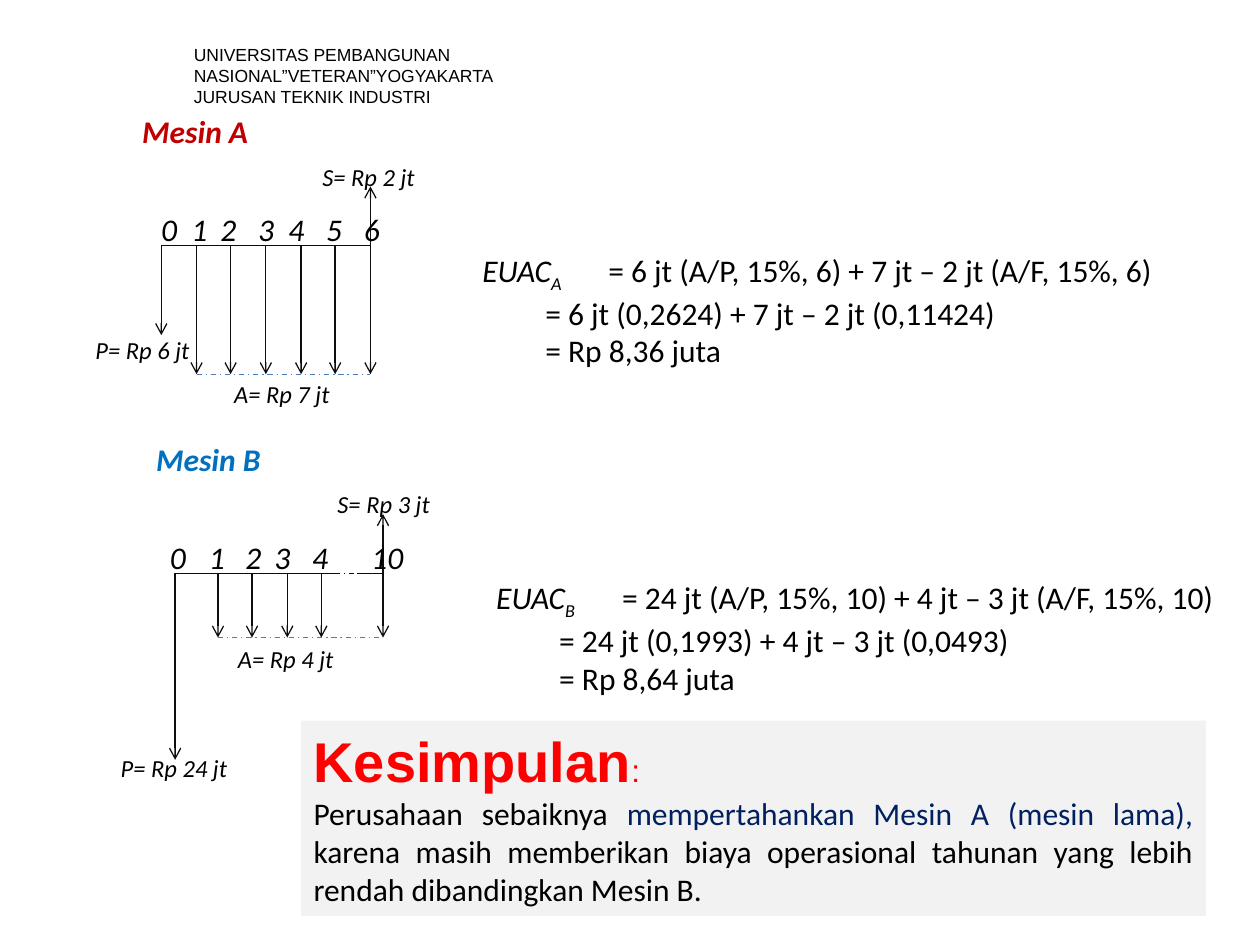
"""Build the slide that compares the annual costs of Mesin A and Mesin B."""
from lxml import etree
from pptx import Presentation
from pptx.dml.color import RGBColor
from pptx.enum import dml, shapes, text
from pptx.oxml.ns import qn
from pptx.util import Inches, Pt

BLACK = RGBColor(0x00, 0x00, 0x00)
INK = RGBColor(0x0D, 0x0D, 0x0D)
BLUE_LINE = RGBColor(0x4B, 0x7E, 0xBC)
DARK_RED = RGBColor(0xC0, 0x00, 0x00)
BLUE = RGBColor(0x00, 0x70, 0xC0)
RED = RGBColor(0xFF, 0x00, 0x00)
NAVY = RGBColor(0x00, 0x20, 0x60)
PALE = RGBColor(0xF2, 0xF2, 0xF2)

prs = Presentation()
prs.slide_width, prs.slide_height = Inches(10), Inches(7.5)
s = prs.slides.add_slide(prs.slide_layouts[6])


def add_line(x1, y1, x2, y2, color=INK, arrow=False, dashed=False):
    c = s.shapes.add_connector(shapes.MSO_CONNECTOR.STRAIGHT,
                               Inches(x1), Inches(y1), Inches(x2), Inches(y2))
    c.line.color.rgb = color
    c.line.width = Pt(0.75)
    if dashed:
        c.line.dash_style = dml.MSO_LINE.DASH_DOT
    if arrow:
        etree.SubElement(c.line._get_or_add_ln(), qn("a:tailEnd"), type="arrow")
    etree.SubElement(c._element.spPr, qn("a:effectLst"))


def add_text(x, y, w, h, lines, size, color=BLACK, font="Calibri",
             bold=False, italic=True, wrap=False, tabs=()):
    tf = s.shapes.add_textbox(Inches(x), Inches(y), Inches(w), Inches(h)).text_frame
    tf.word_wrap = wrap
    tf.text = "\n".join(lines)
    for p in tf.paragraphs:
        if tabs:
            tab_list = etree.SubElement(p._p.get_or_add_pPr(), qn("a:tabLst"))
            for pos in tabs:
                etree.SubElement(tab_list, qn("a:tab"), pos=str(Inches(pos)), algn="l")
        for r in p.runs:
            r.font.name, r.font.size, r.font.color.rgb = font, Pt(size), color
            r.font.bold, r.font.italic = bold, italic
    return tf


add_text(1.44, 0.3, 3.59, 0.44,
         ["UNIVERSITAS PEMBANGUNAN NASIONAL”VETERAN”YOGYAKARTA", "JURUSAN TEKNIK INDUSTRI"],
         10, font="Arial", italic=False, wrap=True)

machines = [
    dict(name="A", color=DARK_RED, title=(1.03, 0.84), axis_y=1.95, start=1.28,
         years=[1.56, 1.83, 2.11, 2.39, 2.66, 2.94], p_end=2.66, a_end=2.97,
         solid=[(1.28, 2.94)], dashed=[],
         scale=(1.18, 1.62, 2.02), numbers="0 1 2 3 4 5 6",
         tabs=[0.24, 0.47, 0.77, 1.01, 1.31, 1.61],
         labels=[(0.66, 2.61, 0.96, "P= Rp 6 jt"), (1.76, 2.96, 0.97, "A= Rp 7 jt"),
                 (2.46, 1.24, 0.96, "S= Rp 2 jt")],
         formula=(3.73, 1.94, 5.68),
         steps=["= 6 jt (A/P, 15%, 6) + 7 jt – 2 jt (A/F, 15%, 6)",
                "= 6 jt (0,2624) + 7 jt – 2 jt (0,11424)", "= Rp 8,36 juta"]),
    dict(name="B", color=BLUE, title=(1.14, 3.44), axis_y=4.55, start=1.39,
         years=[1.73, 2, 2.28, 2.55, 3.04], p_end=6.03, a_end=5.06,
         solid=[(1.39, 2.66), (2.83, 3.04)], dashed=[(2.66, 2.83)],
         scale=(1.25, 4.22, 2.14), numbers="0 1 2 3 4 10",
         tabs=[0.31, 0.6, 0.83, 1.13, 1.6],
         labels=[(0.86, 5.93, 1.06, "P= Rp 24 jt"), (1.79, 5.06, 0.97, "A= Rp 4 jt"),
                 (2.58, 3.83, 0.94, "S= Rp 3 jt")],
         formula=(3.84, 4.54, 5.97),
         steps=["= 24 jt (A/P, 15%, 10) + 4 jt – 3 jt (A/F, 15%, 10)",
                "= 24 jt (0,1993) + 4 jt – 3 jt (0,0493)", "= Rp 8,64 juta"]),
]

for m in machines:
    y, years = m["axis_y"], m["years"]
    add_line(m["start"], y, m["start"], m["p_end"], arrow=True)
    for x in years:
        add_line(x, y, x, m["a_end"], arrow=True)
    add_line(years[-1], y, years[-1], y - 0.47, arrow=True)
    for x1, x2 in m["solid"]:
        add_line(x1, y, x2, y)
    for x1, x2 in m["dashed"]:
        add_line(x1, y, x2, y, dashed=True)
    add_line(years[0], m["a_end"], years[-1], m["a_end"], BLUE_LINE, dashed=True)

    add_text(*m["scale"], 0.4, [m["numbers"].replace(" ", "\t")], 18,
             wrap=True, tabs=m["tabs"])
    for x, top, w, label in m["labels"]:
        add_text(x, top, w, 0.34, [label], 14)
    add_text(*m["title"], 1.05, 0.4, ["Mesin " + m["name"]], 18, m["color"], bold=True)

    tf = add_text(*m["formula"], 1.01, ["\t" + step for step in m["steps"]], 18, italic=False)
    p = tf.paragraphs[0]
    p.text = ""
    for i, part in enumerate(["EUAC", m["name"] + " \t", m["steps"][0]]):
        r = p.add_run()
        r.text = part
        r.font.name, r.font.size, r.font.color.rgb = "Calibri", Pt(18), BLACK
        r.font.italic = i < 2
        if i == 1:
            r.font._element.set("baseline", "-25000")

sp = s.shapes.add_shape(shapes.MSO_SHAPE.RECTANGLE,
                        Inches(2.39), Inches(5.72), Inches(7.18), Inches(1.55))
sp.shadow.inherit = False
sp.fill.solid()
sp.fill.fore_color.rgb = PALE
sp.line.fill.background()
tf = sp.text_frame
tf.word_wrap = True
tf.vertical_anchor = text.MSO_ANCHOR.TOP
conclusion = [
    [("Kesimpulan", "Arial", 32, RED), (":", "Arial", 18, RED)],
    [("Perusahaan sebaiknya ", "Calibri", 18, BLACK),
     ("mempertahankan Mesin A (mesin lama), ", "Calibri", 18, NAVY),
     ("karena masih memberikan biaya operasional tahunan yang lebih rendah "
      "dibandingkan Mesin B.", "Calibri", 18, BLACK)],
]
tf.text = "\n".join([""] * len(conclusion))
for p, parts in zip(tf.paragraphs, conclusion):
    p.alignment = text.PP_ALIGN.JUSTIFY
    for words, font, size, color in parts:
        r = p.add_run()
        r.text = words
        r.font.name, r.font.size, r.font.color.rgb = font, Pt(size), color
        r.font.bold = size == 32

prs.save("out.pptx")
